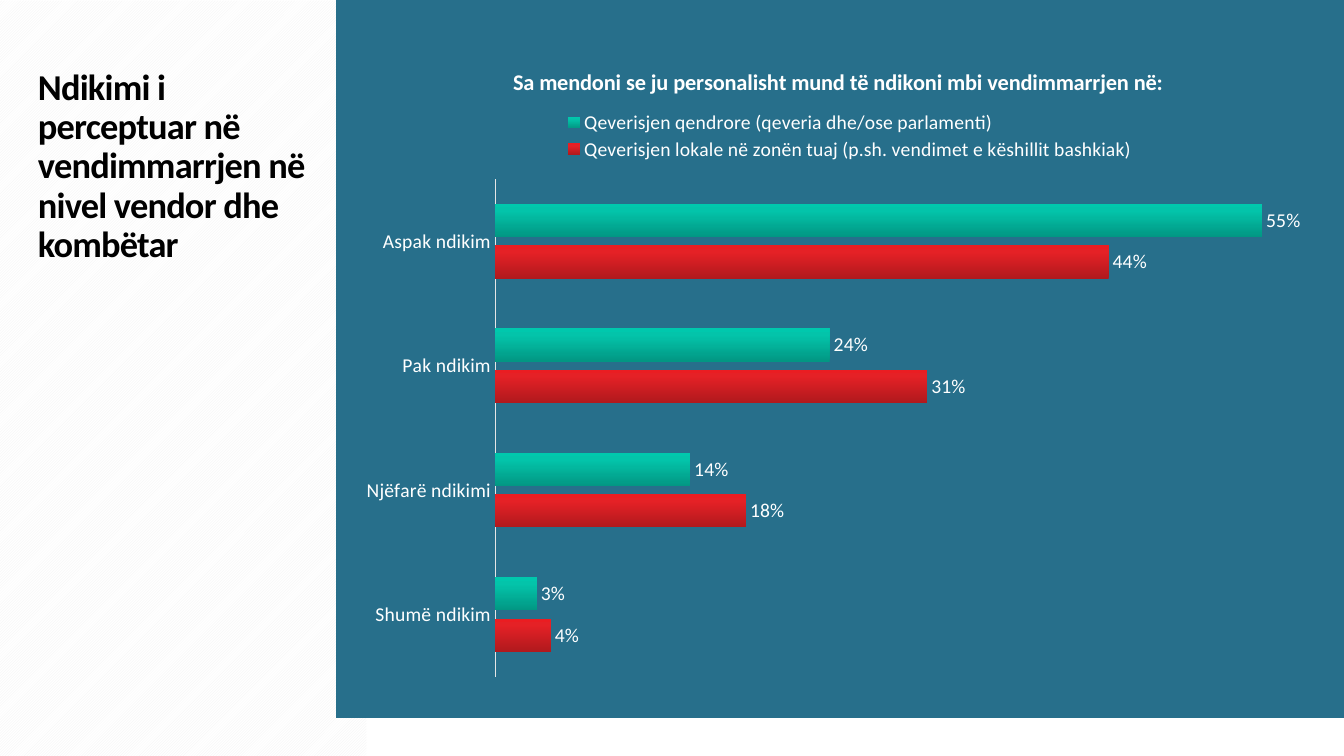
from pptx import Presentation
from pptx.chart.data import CategoryChartData
from pptx.dml.color import RGBColor
from pptx.enum.chart import XL_CHART_TYPE as ChartType, XL_LABEL_POSITION as LabelPos
from pptx.enum.chart import XL_LEGEND_POSITION as LegendPos, XL_TICK_MARK as TickMark
from pptx.enum.dml import MSO_PATTERN as Pattern
from pptx.enum.shapes import MSO_SHAPE as Shape
from pptx.enum.text import MSO_ANCHOR as Anchor
from pptx.oxml import parse_xml
from pptx.oxml.ns import nsdecls, qn
from pptx.util import Emu, Pt

TITLE = "Ndikimi i perceptuar në vendimmarrjen në nivel vendor dhe kombëtar"
QUESTION = "Sa mendoni se ju personalisht mund të ndikoni mbi vendimmarrjen në:"
ANSWERS = ["Shumë ndikim", "Njëfarë ndikimi", "Pak ndikim", "Aspak ndikim"]
SERIES = [
    ("Qeverisjen lokale në zonën tuaj (p.sh. vendimet e këshillit bashkiak)",
     [0.04, 0.18, 0.31, 0.44], ["B0191D", "E52126", "EA1D22"]),
    ("Qeverisjen qendrore (qeveria dhe/ose parlamenti)",
     [0.03, 0.14, 0.24, 0.55], ["029783", "03C4AA", "00C8AD"]),
]
GRADIENT_STOPS = [0, 80, 100]

FONT = "Calibri"
WHITE = RGBColor(0xFF, 0xFF, 0xFF)
BLACK = RGBColor(0, 0, 0)
STRIPE = RGBColor(0xF2, 0xF2, 0xF2)
PANEL = RGBColor(0x27, 0x6F, 0x8B)
AXIS = RGBColor(0xE5, 0xE5, 0xE5)

# Boxes in px: left, top, width, height
SLIDE = (1344, 756)
STRIPES_BOX = (-195, 195, 756, 367)
PANEL_BOX = (336, -7, 1029, 725)
TITLE_BOX = (28, 64, 298, 442)
CHART_BOX = (347, 37, 1005, 653)
PLOT_BOX = (495, 179, 837, 498)
LEGEND_BOX = (565, 108, 570, 56)
QUESTION_AT = (509, 63)


def px(n):
    return Emu(round(n * 914400 / 100.8))


def set_font(font, color, **values):
    font.name = FONT
    font.color.rgb = color
    for name, value in values.items():
        setattr(font, name, value)


def add_rect(slide, box):
    s = slide.shapes.add_shape(Shape.RECTANGLE, *map(px, box))
    s.shadow.inherit = False
    s.line.fill.background()
    return s


def place(part, box, index, inner=False):
    """Fix a chart part at a px box, with its layout element at the given index."""
    for old in part.findall(qn("c:layout")):
        part.remove(old)
    left, top, width, height = CHART_BOX
    fractions = [(box[0] - left) / width, (box[1] - top) / height]
    fractions += [n / whole for n, whole in zip(box[2:], (width, height))]
    target = '<c:layoutTarget val="inner"/>' if inner else ""
    modes = '<c:xMode val="edge"/><c:yMode val="edge"/>'
    sizes = "".join(f'<c:{k} val="{f:.4f}"/>' for k, f in zip("xywh", fractions))
    part.insert(index, parse_xml(
        f'<c:layout {nsdecls("c")}><c:manualLayout>{target}{modes}{sizes}'
        '</c:manualLayout></c:layout>'))


def fill_gradient(series, colors):
    series.format.fill.solid()
    solid = series.format.fill and next(series._element.iter(qn("a:solidFill")))
    stops = "".join(f'<a:gs pos="{pos * 1000}"><a:srgbClr val="{c}"/></a:gs>'
                    for pos, c in zip(GRADIENT_STOPS, colors))
    solid.getparent().replace(solid, parse_xml(
        f'<a:gradFill {nsdecls("a")} rotWithShape="1"><a:gsLst>{stops}</a:gsLst>'
        '<a:lin ang="16200000" scaled="0"/></a:gradFill>'))


def add_title(slide):
    tf = slide.shapes.add_textbox(*map(px, TITLE_BOX)).text_frame
    tf.word_wrap = True
    tf.vertical_anchor = Anchor.TOP
    p = tf.paragraphs[0]
    p.line_spacing = 0.9
    r = p.add_run()
    r.text = TITLE
    set_font(r.font, BLACK, size=Pt(26), bold=True)
    r.font._element.set("spc", "-60")


def add_influence_chart(slide):
    data = CategoryChartData(number_format="0%")
    data.categories = ANSWERS
    for name, values, _ in SERIES:
        data.add_series(name, values)
    chart = slide.shapes.add_chart(
        ChartType.BAR_CLUSTERED, *map(px, CHART_BOX), data).chart
    set_font(chart.font, WHITE, size=Pt(14))

    chart.has_title = True
    p = chart.chart_title.text_frame.paragraphs[0]
    r = p.add_run()
    r.text = QUESTION
    set_font(r.font, WHITE, size=Pt(16), bold=True)

    chart.has_legend = True
    legend = chart.legend
    legend.position = LegendPos.TOP
    legend.include_in_layout = False
    set_font(legend.font, WHITE, size=Pt(14))

    answers = chart.category_axis
    answers.major_tick_mark = answers.minor_tick_mark = TickMark.NONE
    answers.format.line.color.rgb = AXIS
    answers.format.line.width = Pt(0.75)
    set_font(answers.tick_labels.font, WHITE, size=Pt(14))
    shares = chart.value_axis
    shares.visible = shares.has_major_gridlines = False
    shares.minimum_scale, shares.maximum_scale = 0, 0.6

    plot = chart.plots[0]
    plot.gap_width, plot.overlap, plot.vary_by_categories = 150, -25, False
    for series, (_, _, colors) in zip(plot.series, SERIES):
        fill_gradient(series, colors)
        labels = series.data_labels
        labels.show_value = True
        labels.number_format, labels.number_format_is_linked = "0%", False
        labels.position = LabelPos.OUTSIDE_END
        set_font(labels.font, WHITE, size=Pt(14))

    root = chart.element.find(qn("c:chart"))
    place(root.find(qn("c:title")), QUESTION_AT, 1)
    place(root.find(qn("c:legend")), LEGEND_BOX, 1)
    place(root.find(qn("c:plotArea")), PLOT_BOX, 0, inner=True)


def main():
    prs = Presentation()
    prs.slide_width, prs.slide_height = map(px, SLIDE)
    slide = prs.slides.add_slide(prs.slide_layouts[6])

    stripes = add_rect(slide, STRIPES_BOX)
    stripes.rotation = 270
    stripes.fill.patterned()
    stripes.fill.pattern = Pattern.DARK_UPWARD_DIAGONAL
    stripes.fill.fore_color.rgb = STRIPE
    stripes.fill.back_color.rgb = WHITE

    panel = add_rect(slide, PANEL_BOX)
    panel.fill.solid()
    panel.fill.fore_color.rgb = PANEL

    add_title(slide)
    add_influence_chart(slide)
    prs.save("out.pptx")


if __name__ == "__main__":
    main()
